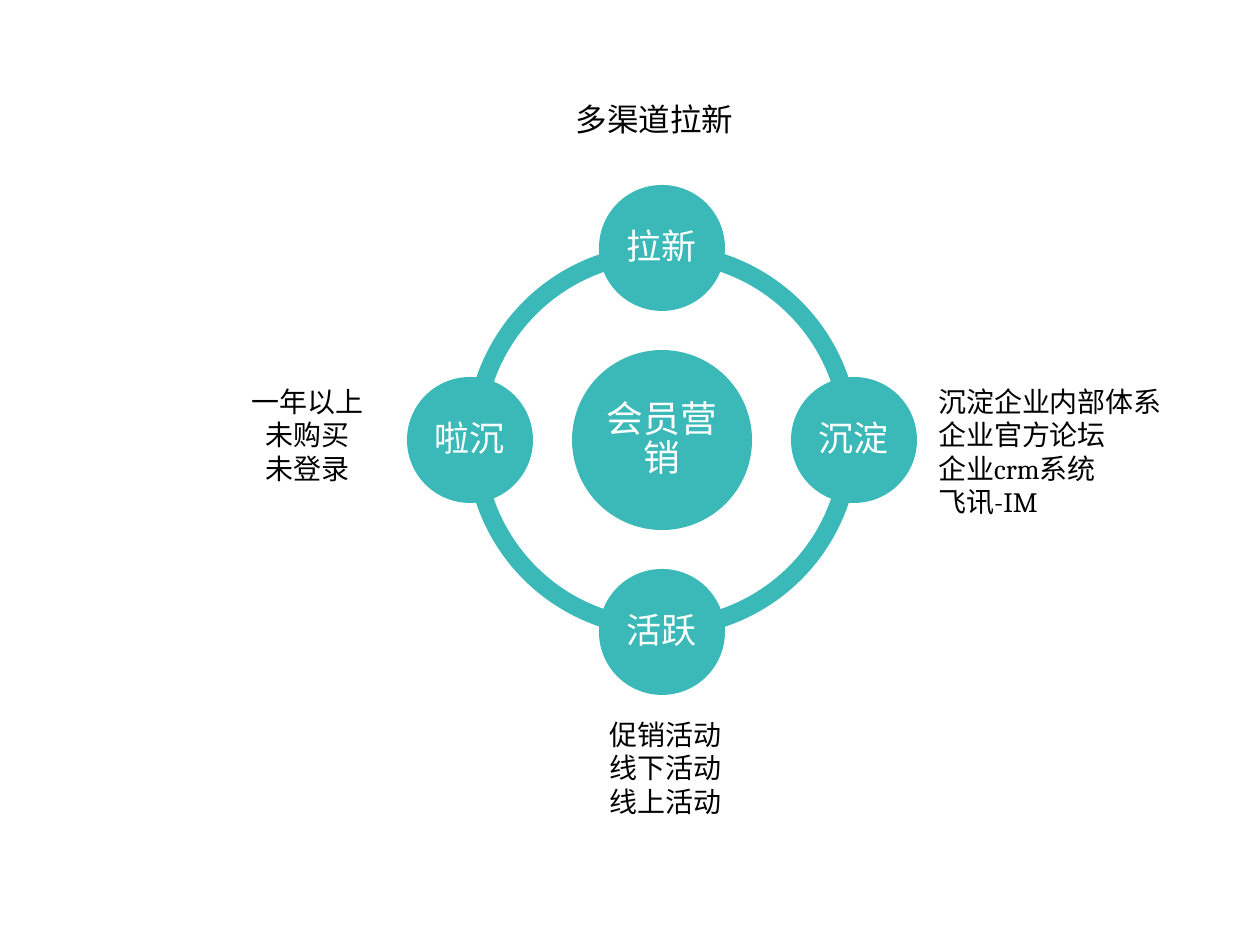
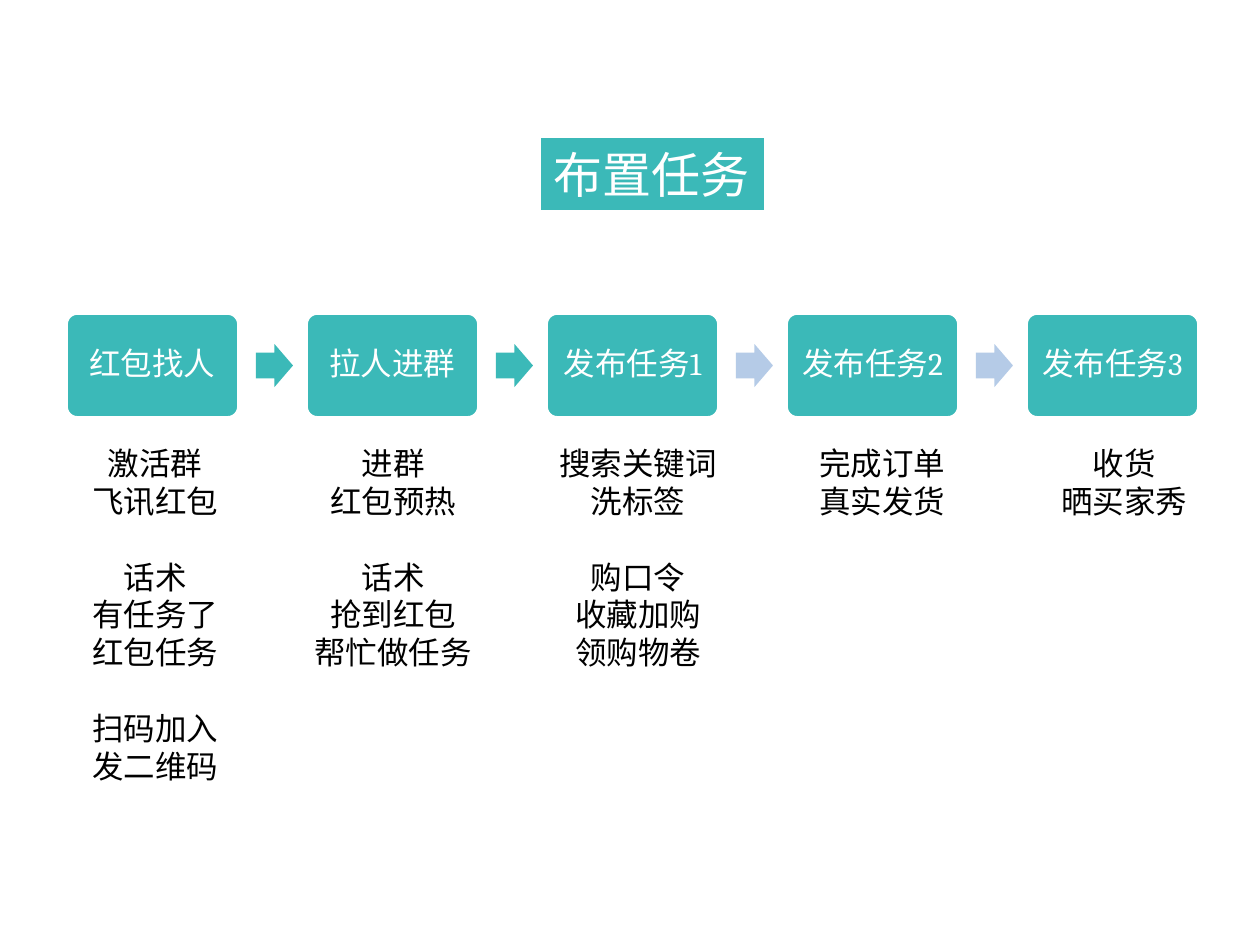
import math
from dataclasses import dataclass

from pptx import Presentation
from pptx.dml.color import RGBColor
from pptx.enum.shapes import MSO_SHAPE
from pptx.enum.text import MSO_ANCHOR, MSO_AUTO_SIZE, PP_ALIGN
from pptx.util import Emu, Pt

LEFT, CENTER = PP_ALIGN.LEFT, PP_ALIGN.CENTER
TOP, MIDDLE = MSO_ANCHOR.TOP, MSO_ANCHOR.MIDDLE
GROW, FIXED = MSO_AUTO_SIZE.SHAPE_TO_FIT_TEXT, MSO_AUTO_SIZE.NONE
OVAL, ARC = MSO_SHAPE.OVAL, MSO_SHAPE.BLOCK_ARC
ROUNDED, ARROW = MSO_SHAPE.ROUNDED_RECTANGLE, MSO_SHAPE.RIGHT_ARROW

PX_PER_INCH = 126
FONT = "Cambria"
COLORS = {
    "teal": "3BB9B8",
    "pale_blue": "B5CBE7",
    "white": "FFFFFF",
    "black": "000000",
}
TITLE_ONLY = 5
GROUP_GAP = 21.6  # one line of 18 pt text


@dataclass(frozen=True)
class Area:
    left: int
    top: int
    width: int
    height: int


@dataclass(frozen=True)
class TextStyle:
    size: int
    color: str = "black"
    align: PP_ALIGN = LEFT
    line_spacing: float = 1.0


@dataclass(frozen=True)
class Caption:
    area: Area
    groups: list[list[str]]
    style: TextStyle
    wrap: bool = False


@dataclass(frozen=True)
class Step:
    name: str
    detail_left: int
    groups: list[list[str]]
    inset: int = 8
    arrow_color: str | None = None


HUB_STYLE = TextStyle(21, "white", CENTER, 0.9)
STAGE_STYLE = TextStyle(20, "white", CENTER, 0.9)
STEP_STYLE = TextStyle(18, "white", CENTER, 0.9)
DETAIL_STYLE = TextStyle(18, align=CENTER)

HUB_X, HUB_Y = 662, 440
HUB_SIZE, STAGE_SIZE, RING_SIZE = 180, 126, 393
ORBIT_RADIUS = 192
STAGES = ["拉新", "沉淀", "活跃", "啦沉"]  # clockwise from the top

STAGE_CAPTIONS = [
    Caption(Area(926, 378, 252, 149),
            [["沉淀企业内部体系", "企业官方论坛", "企业crm系统", "飞讯-IM"]],
            TextStyle(16)),
    Caption(Area(597, 711, 139, 115), [["促销活动", "线下活动", "线上活动"]],
            TextStyle(16)),
    Caption(Area(238, 378, 139, 115), [["一年以上", "未购买", "未登录"]],
            TextStyle(16, align=CENTER)),
]

STEP_LEFT, STEP_PITCH, STEP_TOP = 67, 240, 314
STEP_WIDTH, STEP_HEIGHT = 171, 103
ARROW_OFFSET, ARROW_WIDTH, ARROW_HEIGHT = 189, 37, 43
DETAIL_TOP, DETAIL_WIDTH = 438, 194
STEPS = [
    Step("红包找人", 58,
         [["激活群", "飞讯红包"], ["话术", "有任务了", "红包任务"],
          ["扫码加入", "发二维码"]], arrow_color="teal"),
    Step("拉人进群", 296,
         [["进群", "红包预热"], ["话术", "抢到红包", "帮忙做任务"]],
         arrow_color="teal"),
    Step("发布任务1", 541,
         [["搜索关键词洗标签"], ["购口令", "收藏加购", "领购物卷"]],
         arrow_color="pale_blue"),
    Step("发布任务2", 785, [["完成订单", "真实发货"]], 12, "pale_blue"),
    Step("发布任务3", 1027, [["收货", "晒买家秀"]], 12),
]


def px(length: float) -> Emu:
    return Emu(round(length * 914400 / PX_PER_INCH))


def rgb(name: str) -> RGBColor:
    return RGBColor.from_string(COLORS[name])


def place(area: Area) -> tuple[Emu, Emu, Emu, Emu]:
    return px(area.left), px(area.top), px(area.width), px(area.height)


def centered(x: float, y: float, size: int) -> Area:
    """Square area of the given size around a point."""
    return Area(round(x - size / 2), round(y - size / 2), size, size)


def write(frame, groups: list[list[str]], style: TextStyle) -> None:
    """Write one paragraph a line, with a gap before each later group."""
    para = frame.paragraphs[0]
    for group_index, lines in enumerate(groups):
        for line_index, line in enumerate(lines):
            if group_index or line_index:
                para = frame.add_paragraph()
            para.alignment = style.align
            para.line_spacing = style.line_spacing
            if group_index and not line_index:
                para.space_before = Pt(GROUP_GAP)
            span = para.add_run()
            span.text = line
            span.font.name = FONT
            span.font.size = Pt(style.size)
            span.font.color.rgb = rgb(style.color)


def add_titled_page(deck, title: str, area: Area, style: TextStyle,
                    fill: str | None = None):
    page = deck.slides.add_slide(deck.slide_layouts[TITLE_ONLY])
    box = page.shapes.title
    box.left, box.top, box.width, box.height = place(area)
    if fill:
        box.fill.solid()
        box.fill.fore_color.rgb = rgb(fill)
    frame = box.text_frame
    frame.word_wrap = False
    frame.auto_size = FIXED
    frame.vertical_anchor = TOP
    write(frame, [[title]], style)
    return page


def add_filled(page, kind: MSO_SHAPE, area: Area, color: str = "teal",
               adjustments: tuple[float, ...] = ()):
    shape = page.shapes.add_shape(kind, *place(area))
    shape.shadow.inherit = False
    shape.fill.solid()
    shape.fill.fore_color.rgb = rgb(color)
    shape.line.fill.background()
    for index, value in enumerate(adjustments):
        shape.adjustments[index] = value
    return shape


def label(shape, text: str, style: TextStyle, inset: int) -> None:
    frame = shape.text_frame
    frame.word_wrap = True
    frame.vertical_anchor = MIDDLE
    frame.margin_left = frame.margin_right = px(inset)
    frame.margin_top = frame.margin_bottom = px(inset)
    write(frame, [[text]], style)


def add_caption(page, caption: Caption) -> None:
    frame = page.shapes.add_textbox(*place(caption.area)).text_frame
    frame.word_wrap = caption.wrap
    frame.auto_size = GROW
    write(frame, caption.groups, caption.style)


def build_cycle_page(deck) -> None:
    page = add_titled_page(deck, "多渠道拉新", Area(563, 94, 184, 50),
                           TextStyle(18))
    ring = centered(HUB_X, HUB_Y, RING_SIZE)
    for start in (180, 90, 0, 270):
        end = (start + 90) % 360
        # Angles are stored in 60000ths of a degree, adjustments in 100000ths.
        add_filled(page, ARC, ring,
                   adjustments=(start * 0.6, end * 0.6, 0.046))
    hub = add_filled(page, OVAL, centered(HUB_X, HUB_Y, HUB_SIZE))
    label(hub, "会员营销", HUB_STYLE, 4)
    for index, name in enumerate(STAGES):
        angle = math.tau * index / len(STAGES)
        x = HUB_X + ORBIT_RADIUS * math.sin(angle)
        y = HUB_Y - ORBIT_RADIUS * math.cos(angle)
        stage = add_filled(page, OVAL, centered(x, y, STAGE_SIZE))
        label(stage, name, STAGE_STYLE, 4)
    for caption in STAGE_CAPTIONS:
        add_caption(page, caption)


def build_task_page(deck) -> None:
    page = add_titled_page(deck, "布置任务", Area(541, 138, 223, 72),
                           TextStyle(28, "white"), "teal")
    arrow_top = STEP_TOP + (STEP_HEIGHT - ARROW_HEIGHT) // 2
    for index, step in enumerate(STEPS):
        left = STEP_LEFT + index * STEP_PITCH
        card = add_filled(page, ROUNDED,
                          Area(left, STEP_TOP, STEP_WIDTH, STEP_HEIGHT),
                          adjustments=(0.1,))
        card.line.color.rgb = rgb("white")
        card.line.width = Pt(1)
        label(card, step.name, STEP_STYLE, step.inset)
        if step.arrow_color:
            add_filled(page, ARROW,
                       Area(left + ARROW_OFFSET, arrow_top,
                            ARROW_WIDTH, ARROW_HEIGHT),
                       step.arrow_color, (0.6, 0.5))
        line_count = sum(len(lines) for lines in step.groups)
        detail = Area(step.detail_left, DETAIL_TOP, DETAIL_WIDTH,
                      38 * line_count + 13)
        add_caption(page, Caption(detail, step.groups, DETAIL_STYLE, True))


def main() -> None:
    deck = Presentation()
    deck.slide_width, deck.slide_height = px(1260), px(945)
    build_cycle_page(deck)
    build_task_page(deck)
    deck.save("out.pptx")


if __name__ == "__main__":
    main()
